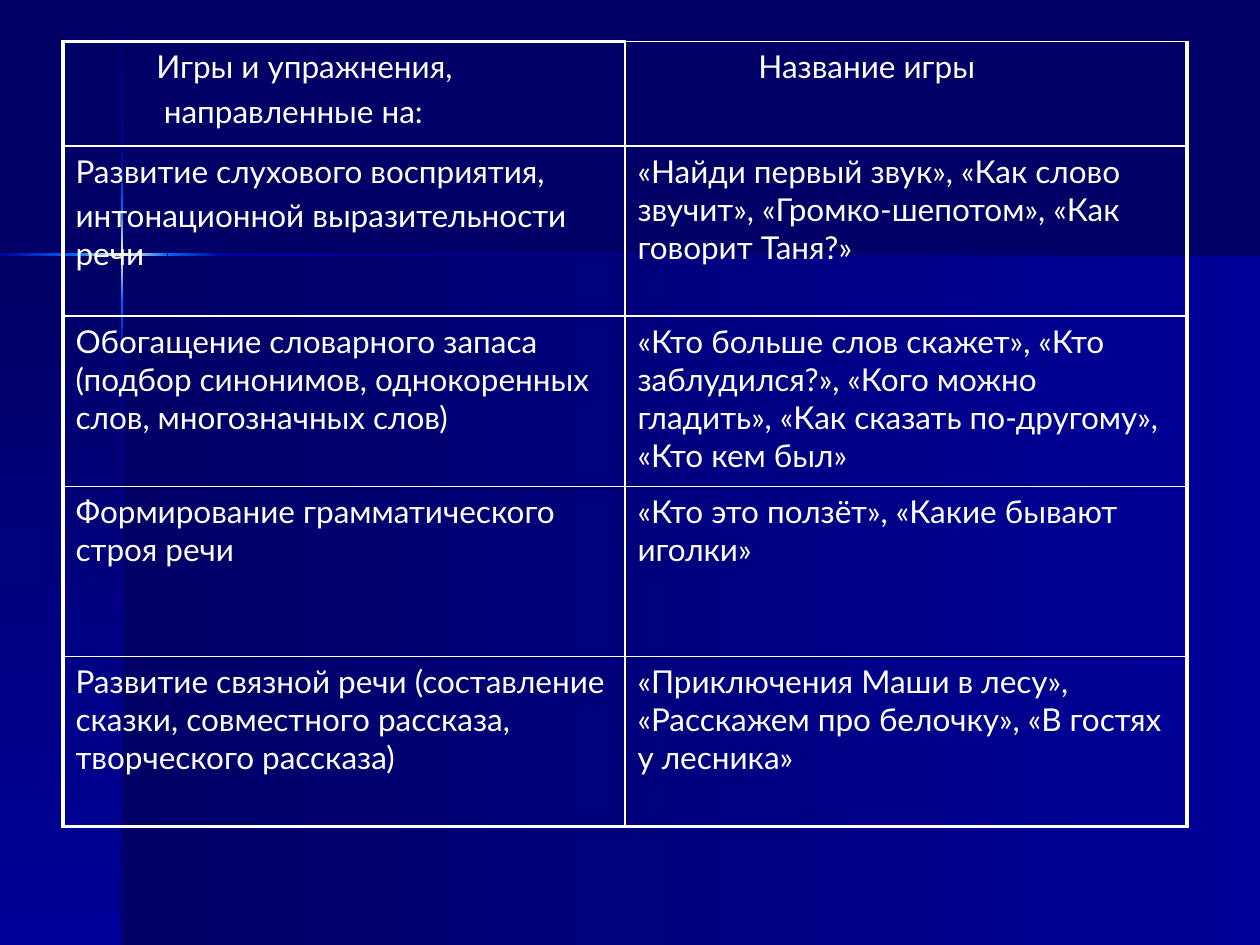
from lxml import etree
from pptx import Presentation
from pptx import util as u
from pptx.dml.color import RGBColor
from pptx.enum import shapes
from pptx.oxml import ns

NAVY, BLUE, AZURE, CREAM, WHITE = "000066", "000099", "0066FF", "FFFFCC", "FFFFFF"


def rgb(value):
    return RGBColor.from_string(value)


def add_solid_line(tc_pr, side, index, width):
    ln = etree.Element(ns.qn(f"a:ln{side}"), w=str(u.Pt(width)))
    fill = etree.SubElement(ln, ns.qn("a:solidFill"))
    etree.SubElement(fill, ns.qn("a:srgbClr"), val=WHITE)
    tc_pr.insert(index, ln)


prs = Presentation()
prs.slide_width, prs.slide_height = u.Inches(10), u.Inches(7.5)
s = prs.slides.add_slide(prs.slide_layouts[6])
s.background.fill.solid()
s.background.fill.fore_color.rgb = rgb(NAVY)

# Backdrop panels and glowing cross: left, top, width, height, angle, colours
backdrop = [
    (0.97, 2.02, 9.03, 5.48, 0, [NAVY, BLUE]),
    (0, 2.02, 0.97, 5.48, 90, [NAVY, BLUE]),
    (0.96, 0.01, 0.02, 1.2, 90, [NAVY, BLUE]),
    (0.96, 2.82, 0.02, 4.68, 90, [BLUE, NAVY]),
    (1.77, 2.01, 8.23, 0.02, 0, [BLUE, NAVY]),
    (0.96, 2.38, 0.02, 0.44, 90, [AZURE, BLUE]),
    (0.96, 1.21, 0.02, 0.44, 90, [BLUE, AZURE]),
    (0.96, 1.65, 0.02, 0.73, 90, [AZURE, CREAM, AZURE]),
    (0, 2.01, 0.61, 0.02, 0, [BLUE, AZURE]),
    (1.33, 2.01, 0.44, 0.02, 0, [AZURE, BLUE]),
    (0.6, 2.01, 0.73, 0.02, 0, [AZURE, CREAM, AZURE]),
]
for *box, angle, colours in backdrop:
    sp = s.shapes.add_shape(shapes.MSO_SHAPE.RECTANGLE, *map(u.Inches, box))
    sp.shadow.inherit = False
    sp.line.fill.background()
    sp.fill.gradient()
    sp.fill.gradient_angle = -angle % 360  # counted counter-clockwise
    stops = sp._element.spPr.find(ns.qn("a:gradFill")).find(ns.qn("a:gsLst"))
    for stop in list(stops):
        stops.remove(stop)
    for i, colour in enumerate(colours):
        pos = 100000 * i // (len(colours) - 1)
        stop = etree.SubElement(stops, ns.qn("a:gs"), pos=str(pos))
        etree.SubElement(stop, ns.qn("a:srgbClr"), val=colour)

# Each cell is a list of paragraphs: (text, left indent in inches)
rows = [
    ([("Игры и упражнения,", 0.64), ("направленные на:", 0.7)],
     [("Название игры", 0.96)]),
    ([("Развитие слухового восприятия,", 0),
      ("интонационной выразительности речи", 0)],
     [("«Найди первый звук», «Как слово звучит», «Громко-шепотом», "
       "«Как говорит Таня?»", 0)]),
    ([("Обогащение словарного запаса (подбор синонимов, однокоренных слов, "
       "многозначных слов)", 0)],
     [("«Кто больше слов скажет», «Кто заблудился?», «Кого можно гладить», "
       "«Как сказать по-другому», «Кто кем был»", 0)]),
    ([("Формирование грамматического строя речи", 0)],
     [("«Кто это ползёт», «Какие бывают иголки»", 0)]),
    ([("Развитие связной речи (составление сказки, совместного рассказа, "
       "творческого рассказа)", 0)],
     [("«Приключения Маши в лесу», «Расскажем про белочку», "
       "«В гостях у лесника»", 0)]),
]
table = s.shapes.add_table(len(rows), 2, u.Inches(0.5), u.Inches(0.33),
                           u.Inches(8.92), u.Inches(6.23)).table
table.first_row = table.horz_banding = False
for col in table.columns:
    col.width = u.Inches(4.46)

thin, thick = 1, 2.25
last = len(rows) - 1
for i, row in enumerate(rows):
    table.rows[i].height = u.Inches(1.35 if i else 0.83)
    for j, paragraphs in enumerate(row):
        cell = table.cell(i, j)
        cell.fill.background()
        widths = {
            "L": thick if j == 0 else thin,
            "R": thick if j == 1 else thin,
            "T": thick if i == j == 0 else thin,
            "B": thick if i == last else thin,
        }
        tc_pr = cell._tc.get_or_add_tcPr()
        for index, (side, width) in enumerate(widths.items()):
            add_solid_line(tc_pr, side, index, width)
        tf = cell.text_frame
        for k, (line, indent) in enumerate(paragraphs):
            p = tf.add_paragraph() if k else tf.paragraphs[0]
            p.space_before = u.Pt(3.6)
            p._p.get_or_add_pPr().set("marL", str(u.Inches(indent)))
            r = p.add_run()
            r.text = line
            r.font.name, r.font.size = "Lato", u.Pt(18)
            r.font.color.rgb = rgb(WHITE)

prs.save("out.pptx")
